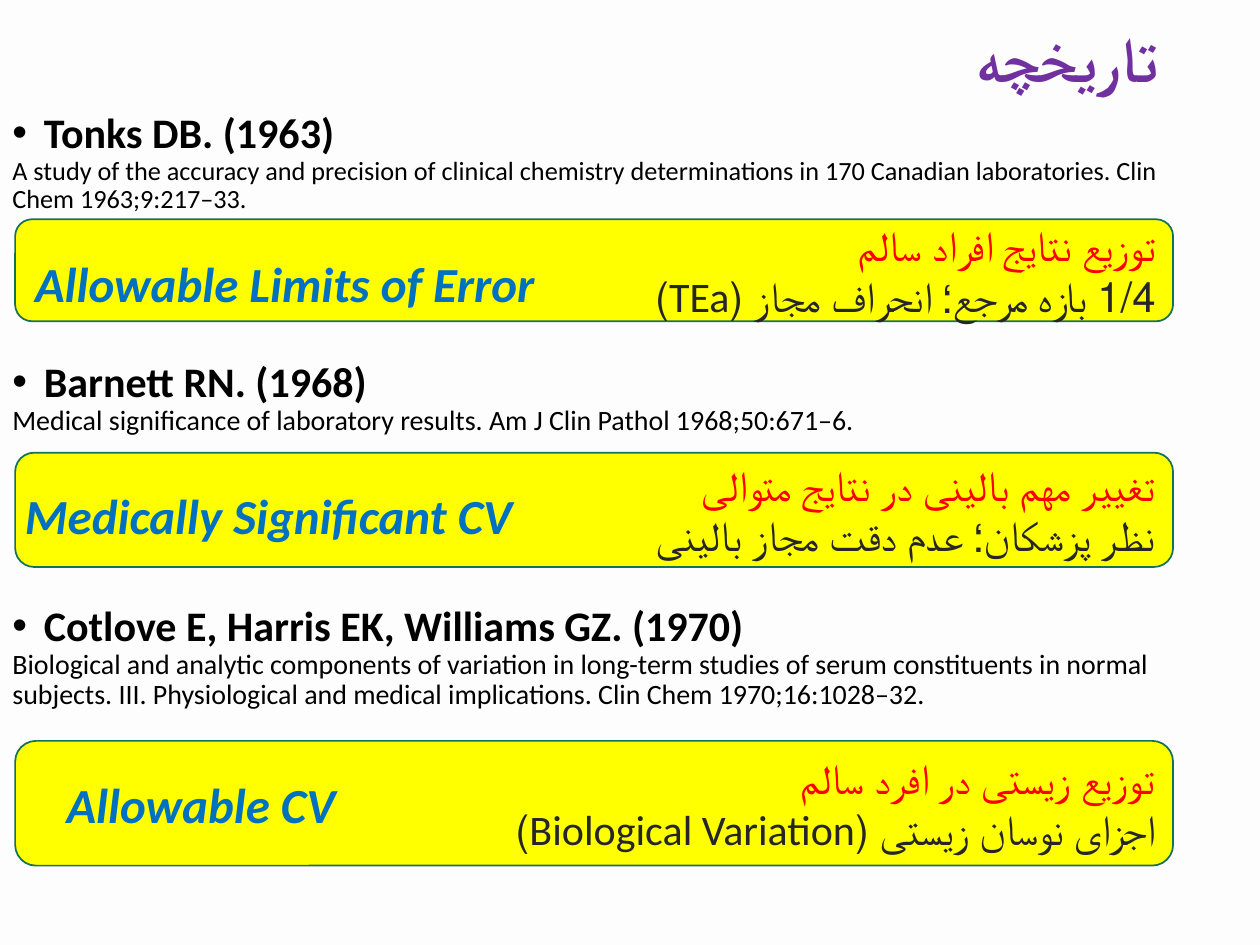
from lxml.etree import SubElement
from pptx import Presentation
from pptx.dml.color import RGBColor
from pptx.enum.shapes import MSO_SHAPE
from pptx.enum.text import MSO_ANCHOR, PP_ALIGN
from pptx.oxml.ns import qn
from pptx.util import Inches, Pt

W, H = Inches(10), Inches(7.5)
LEFT, RIGHT = 0.012 * W, 0.931 * W


def color(value):
    return RGBColor.from_string(value)


def write(p, text, size, hue, bold=False, italic=False):
    p.text = text
    f = p.runs[0].font
    f.name, f.size, f.bold, f.italic = "Calibri", Pt(size), bold, italic
    f.color.rgb = color(hue)


prs = Presentation()
prs.slide_width, prs.slide_height = W, H
s = prs.slides.add_slide(prs.slide_layouts[5])
s.background.fill.solid()
s.background.fill.fore_color.rgb = color("FDFDFD")

title = s.shapes.title
title.left, title.top = int(0.067 * W), 0
title.width, title.height = int(0.862 * W), int(0.132 * H)
title.text_frame.vertical_anchor = MSO_ANCHOR.MIDDLE
p = title.text_frame.paragraphs[0]
write(p, "تاریخچه", 36, "7030A0", bold=True)
p.alignment, p.line_spacing = PP_ALIGN.RIGHT, 0.9

studies = [
    ("Tonks DB. (1963)", 0,
     "A study of the accuracy and precision of clinical chemistry determinations "
     "in 170 Canadian laboratories. Clin Chem 1963;9:217–33.", 15),
    ("Barnett RN. (1968)", 24,
     "Medical significance of laboratory results. Am J Clin Pathol 1968;50:671–6.", 16),
    ("Cotlove E, Harris EK, Williams GZ. (1970)", 36,
     "Biological and analytic components of variation in long-term studies of serum "
     "constituents in normal subjects. III. Physiological and medical implications. "
     "Clin Chem 1970;16:1028–32.", 16),
]
body = s.shapes.add_textbox(0, int(0.112 * H), int(RIGHT), int(0.79 * H))
tf = body.text_frame
tf.word_wrap = True
for i, (author, before, paper, size) in enumerate(studies):
    p = tf.add_paragraph() if i else tf.paragraphs[0]
    write(p, author, 24, "000000", bold=True)
    p.line_spacing, p.space_before = 0.9, Pt(before)
    pPr = p._p.get_or_add_pPr()
    pPr.set("marL", str(Inches(0.25)))
    pPr.set("indent", str(-Inches(0.25)))
    SubElement(pPr, qn("a:buFont")).set("typeface", "Arial")
    SubElement(pPr, qn("a:buChar")).set("char", "•")
    p = tf.add_paragraph()
    write(p, paper, size, "000000")
    p.line_spacing, p.space_before, p.space_after = 0.9, Pt(0), Pt(60)

panels = [
    (0.232, 0.108, "توزیع نتایج افراد سالم", "1/4 بازه مرجع؛ انحراف مجاز (TEa)",
     "Allowable Limits of Error", 0.018, 0.257, 0.513),
    (0.479, 0.121, "تغییر مهم بالینی در نتایج متوالی", "نظر پزشکان؛ عدم دقت مجاز بالینی",
     "Medically Significant CV", 0.01, 0.503, 0.603),
    (0.784, 0.132, "توزیع زیستی در افرد سالم", "اجزای نوسان زیستی (Biological Variation)",
     "Allowable CV", 0.043, 0.809, 0.357),
]
for top, height, basis, measure, term, x, y, width in panels:
    sp = s.shapes.add_shape(MSO_SHAPE.ROUNDED_RECTANGLE, int(LEFT), int(top * H),
                            int(RIGHT - LEFT), int(height * H))
    sp.shadow.inherit = False
    sp.fill.solid()
    sp.fill.fore_color.rgb = color("FFFF00")
    sp.line.color.rgb = color("157259")
    sp.line.width = Pt(1)
    tf = sp.text_frame
    tf.vertical_anchor = MSO_ANCHOR.MIDDLE
    for p, text, hue in ((tf.paragraphs[0], basis, "FF0000"),
                         (tf.add_paragraph(), measure, "262626")):
        write(p, text, 24, hue)
        p.alignment = PP_ALIGN.RIGHT
        p._p.get_or_add_pPr().set("rtl", "1")

    label = s.shapes.add_textbox(int(x * W), int(y * H), int(width * W), int(0.081 * H))
    label.text_frame.word_wrap = True
    p = label.text_frame.paragraphs[0]
    write(p, term, 28, "0070C0", bold=True, italic=True)
    p.line_spacing = 1.07

prs.save("out.pptx")
